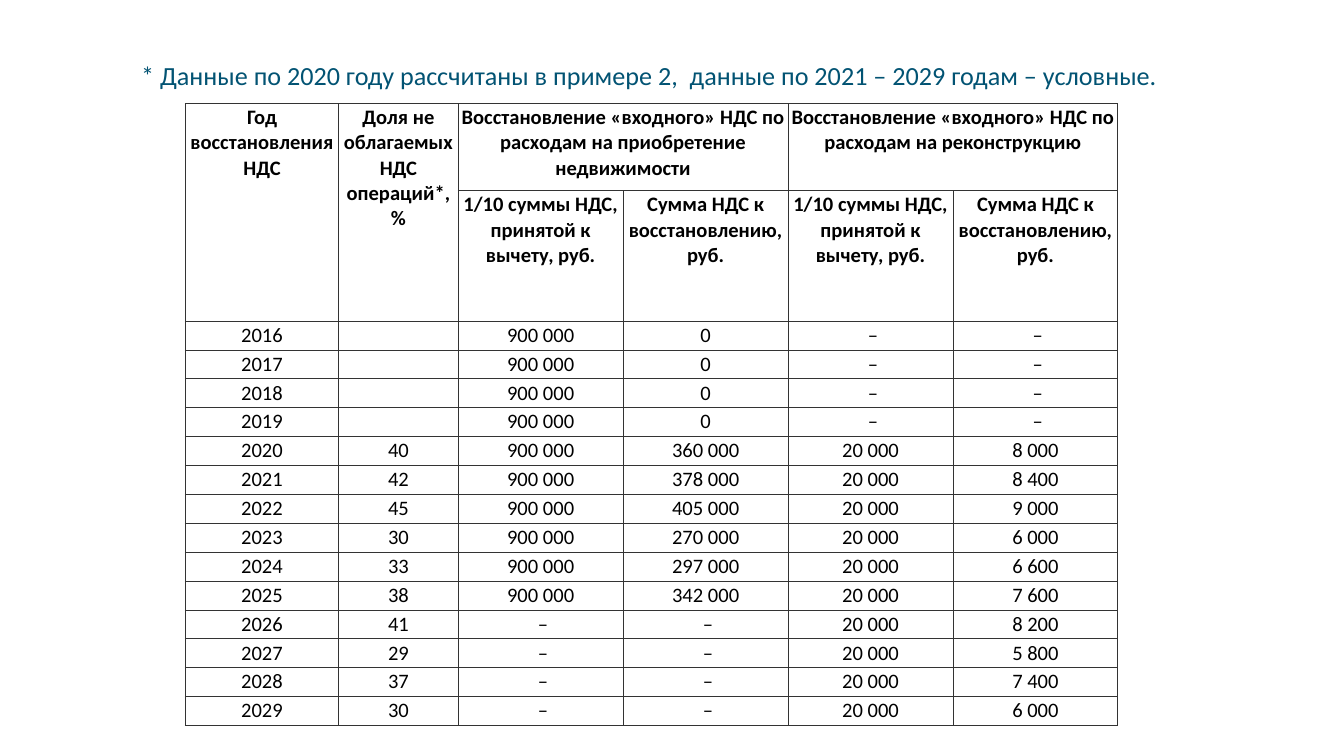
from dataclasses import dataclass

from lxml.etree import SubElement
from pptx import Presentation
from pptx.dml.color import RGBColor
from pptx.enum.text import MSO_ANCHOR, MSO_AUTO_SIZE, PP_ALIGN
from pptx.oxml.ns import qn
from pptx.util import Inches, Pt


@dataclass(frozen=True)
class Theme:
    font: str = "Calibri"
    heading: str = "025373"
    text: str = "000000"
    border: str = "333333"
    background: str = "FFFFFF"
    heading_size: float = 14
    table_size: float = 11
    border_width: float = 0.6


THEME = Theme()
HEADING = "* Данные по 2020 году рассчитаны в примере 2,  данные по 2021 – 2029 годам – условные."
TOP_HEADERS = [
    "Год восстановления НДС",
    "Доля не облагаемых НДС операций*, %",
    "Восстановление «входного» НДС по расходам на приобретение недвижимости",
    "",
    "Восстановление «входного» НДС по расходам на реконструкцию",
    "",
]
SUB_HEADERS = ["1/10 суммы НДС, принятой к вычету, руб.", "Сумма НДС к восстановлению, руб."]
DASH = " –"
YEARS = range(2016, 2030)
TAXABLE_SHARES = dict(zip(range(2020, 2030), [40, 42, 45, 30, 33, 38, 41, 29, 37, 30]))
# Tenth of the deducted tax and the ten years over which it is restored
PROPERTY = (900_000, range(2016, 2026))
RECONSTRUCTION = (20_000, range(2020, 2030))

LABEL_WIDTHS = [1.14, 0.89]
AMOUNT_COLUMNS = 4
HEADER_HEIGHTS = [0.65, 0.97]
MERGES = [((0, 0), (1, 0)), ((0, 1), (1, 1)), ((0, 2), (0, 3)), ((0, 4), (0, 5))]
CELL_FORMAT = {
    "margin_left": Inches(0.02),
    "margin_right": Inches(0.02),
    "margin_top": Inches(0.01),
    "margin_bottom": Inches(0.01),
    "vertical_anchor": MSO_ANCHOR.TOP,
}


def set_attributes(target, values):
    for name, value in values.items():
        setattr(target, name, value)


def write(para, text, size, color, align, bold=False):
    """Fill a paragraph; an empty one only gets its line height from the size."""
    para.alignment = align
    if not text:
        SubElement(para._p, qn("a:endParaRPr"), sz=str(int(size * 100)))
        return
    span = para.add_run()
    span.text = text
    set_attributes(span.font, {"name": THEME.font, "size": Pt(size), "bold": bold})
    span.font.color.rgb = RGBColor.from_string(color)


def amount(value):
    return f"{value:,}".replace(",", " ")


def restoration(year, tenth, years):
    """Return the deducted tenth and the sum to restore for one year."""
    if year not in years:
        return [DASH, DASH]
    return [amount(tenth), amount(tenth * TAXABLE_SHARES.get(year, 0) // 100)]


def table_rows():
    rows = [TOP_HEADERS, ["", ""] + SUB_HEADERS * 2]
    for year in YEARS:
        share = str(TAXABLE_SHARES.get(year, ""))
        rows.append([str(year), share]
                    + restoration(year, *PROPERTY) + restoration(year, *RECONSTRUCTION))
    return rows


def add_borders(cell):
    properties = cell._tc.get_or_add_tcPr()
    for position, side in enumerate(("lnL", "lnR", "lnT", "lnB")):
        line = SubElement(properties, qn(f"a:{side}"), w=str(Pt(THEME.border_width)))
        fill = SubElement(line, qn("a:solidFill"))
        SubElement(fill, qn("a:srgbClr"), val=THEME.border)
        properties.insert(position, line)


def add_heading(page, left, top, width, height):
    box = page.shapes.title
    set_attributes(box, {"left": Inches(left), "top": Inches(top),
                         "width": Inches(width), "height": Inches(height)})
    frame = box.text_frame
    set_attributes(frame, {"word_wrap": False, "vertical_anchor": MSO_ANCHOR.MIDDLE,
                           "auto_size": MSO_AUTO_SIZE.SHAPE_TO_FIT_TEXT})
    write(frame.paragraphs[0], HEADING, THEME.heading_size, THEME.heading, PP_ALIGN.LEFT)


def add_tax_table(page, left, top, width, height):
    rows = table_rows()
    amount_width = (width - sum(LABEL_WIDTHS)) / AMOUNT_COLUMNS
    column_widths = LABEL_WIDTHS + [amount_width] * AMOUNT_COLUMNS
    year_height = (height - sum(HEADER_HEIGHTS)) / len(YEARS)
    row_heights = HEADER_HEIGHTS + [year_height] * len(YEARS)
    frame = page.shapes.add_table(len(rows), len(column_widths), Inches(left), Inches(top),
                                  Inches(width), Inches(height))
    table = frame.table
    set_attributes(table, {"first_row": False, "horz_banding": False})
    for column, column_width in zip(table.columns, column_widths):
        column.width = Inches(column_width)
    for row, row_height in zip(table.rows, row_heights):
        row.height = Inches(row_height)

    for row_index, texts in enumerate(rows):
        for column_index, text in enumerate(texts):
            cell = table.cell(row_index, column_index)
            set_attributes(cell, CELL_FORMAT)
            cell.fill.background()
            add_borders(cell)
            write(cell.text_frame.paragraphs[0], text, THEME.table_size, THEME.text,
                  PP_ALIGN.CENTER, bold=row_index < len(HEADER_HEIGHTS))
    for first, last in MERGES:
        table.cell(*first).merge(table.cell(*last))


def main():
    deck = Presentation()
    deck.slide_width = Inches(10)
    deck.slide_height = deck.slide_width * 9 // 16
    page = deck.slides.add_slide(deck.slide_layouts[5])
    page.background.fill.solid()
    page.background.fill.fore_color.rgb = RGBColor.from_string(THEME.background)
    add_tax_table(page, 1.38, 0.77, 6.94, 4.63)
    add_heading(page, 0.95, 0.39, 7.79, 0.34)
    deck.save("out.pptx")


if __name__ == "__main__":
    main()
